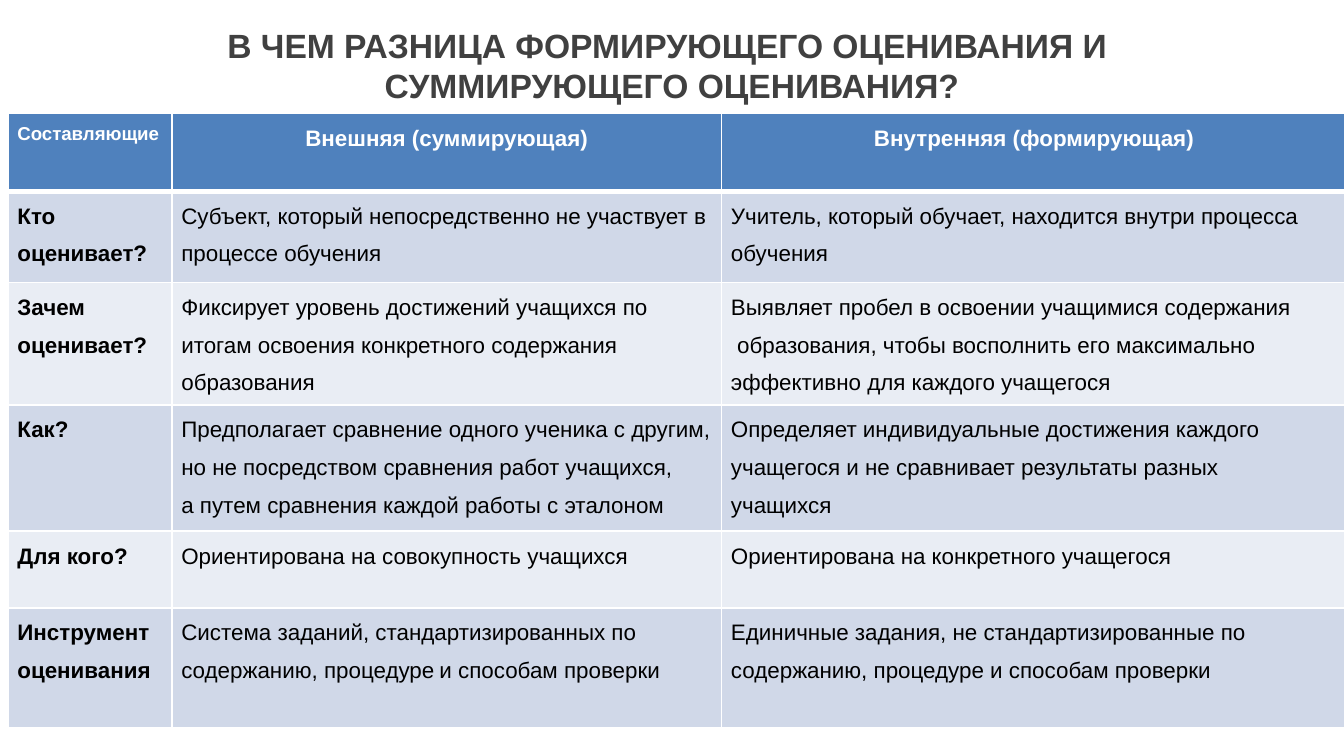
from lxml import etree
from pptx import Presentation
from pptx.dml.color import RGBColor
from pptx.enum.text import MSO_ANCHOR, MSO_AUTO_SIZE, PP_ALIGN
from pptx.oxml import parse_xml
from pptx.util import Inches, Pt

LEFT, CENTER = PP_ALIGN.LEFT, PP_ALIGN.CENTER
MIDDLE, NO_FIT = MSO_ANCHOR.MIDDLE, MSO_AUTO_SIZE.NONE
DRAWING = "http://schemas.openxmlformats.org/drawingml/2006/main"

WIDTH = 10
HEIGHT = WIDTH * 9 / 16
COLORS = {"title": "404040", "header": "4F81BD", "odd": "D0D8E8",
          "even": "E9EDF4", "white": "FFFFFF", "text": "000000"}

COLUMNS = [1.22, 4.09, 4.65]
ROWS = [0.58, 0.68, 0.91, 0.94, 0.57, 0.89]
NARROW_SPACE = (" ", {"size": 11, "font": "Calibri"})

# A cell is a list of paragraphs; a paragraph is a string or a list of spans.
CELLS = [
    [["Составляющие"], ["Внешняя (суммирующая)"], ["Внутренняя (формирующая)"]],
    [["Кто", "оценивает?"],
     ["Субъект, который непосредственно не участвует в процессе обучения"],
     ["Учитель, который обучает, находится внутри процесса", "обучения"]],
    [["Зачем", "оценивает?"],
     ["Фиксирует уровень достижений учащихся по",
      "итогам освоения конкретного содержания",
      "образования"],
     ["Выявляет пробел в освоении учащимися содержания",
      " образования, чтобы восполнить его максимально",
      "эффективно для каждого учащегося"]],
    [["Как?"],
     ["Предполагает сравнение одного ученика с другим,",
      "но не посредством сравнения работ учащихся,",
      "а путем сравнения каждой работы с эталоном"],
     ["Определяет индивидуальные достижения каждого",
      "учащегося и не сравнивает результаты разных",
      "учащихся"]],
    [["Для кого?"],
     ["Ориентирована на совокупность учащихся"],
     ["Ориентирована на конкретного учащегося"]],
    [["Инструмент оценивания"],
     [[("Система заданий, стандартизированных по содержанию, процедуре", {}),
       NARROW_SPACE,
       ("и способам проверки", {})]],
     ["Единичные задания, не стандартизированные по содержанию, "
      "процедуре и способам проверки"]],
]
SPACED_CELLS = {(0, 0), (1, 1), (5, 1), (5, 2)}


def add_span(para, text, size=12, font="Arial", color="text", bold=False):
    """Add formatted text, with a line break at each newline."""
    for index, line in enumerate(text.split("\n")):
        if index:
            para.add_line_break()
        span = para.add_run()
        span.text = line
        span.font.size = Pt(size)
        span.font.name = font
        span.font.bold = bold
        span.font.color.rgb = RGBColor.from_string(COLORS[color])


def write(frame, paragraphs, align=LEFT, spacing=None, after=0, **style):
    """Fill a text frame with paragraphs that share one format."""
    for index, content in enumerate(paragraphs):
        para = frame.add_paragraph() if index else frame.paragraphs[0]
        para.alignment = align
        para.line_spacing = spacing
        para.space_before, para.space_after = Pt(0), Pt(after)
        spans = [(content, {})] if isinstance(content, str) else content
        for text, changes in spans:
            add_span(para, text, **{**style, **changes})


def add_borders(cell, bottom):
    properties = cell._tc.get_or_add_tcPr()
    for side, points in (("L", 1), ("R", 1), ("T", 1), ("B", bottom)):
        line = parse_xml(f'<a:ln{side} xmlns:a="{DRAWING}" w="{Pt(points)}"/>')
        fill = etree.SubElement(line, f"{{{DRAWING}}}solidFill")
        etree.SubElement(fill, f"{{{DRAWING}}}srgbClr", val=COLORS["white"])
        properties.append(line)


class Page:
    """One slide; places are percentages of its width and height."""

    def __init__(self, deck):
        self.slide = deck.slides.add_slide(deck.slide_layouts[5])

    def x(self, percent):
        return Inches(WIDTH * percent / 100)

    def y(self, percent):
        return Inches(HEIGHT * percent / 100)

    def title(self, text, height):
        box = self.slide.shapes.title
        box.left, box.top = 0, 0
        box.width, box.height = self.x(100), self.y(height)
        frame = box.text_frame
        frame.word_wrap, frame.auto_size = True, NO_FIT
        frame.vertical_anchor = MIDDLE
        write(frame, [text], align=CENTER, size=18, color="title", bold=True)

    def table(self, left, top):
        table = self.slide.shapes.add_table(
            len(ROWS), len(COLUMNS), self.x(left), self.y(top),
            Inches(sum(COLUMNS)), Inches(sum(ROWS))).table
        for column, width in zip(table.columns, COLUMNS):
            column.width = Inches(width)
        for row, height in zip(table.rows, ROWS):
            row.height = Inches(height)
        for row, contents in enumerate(CELLS):
            for column, paragraphs in enumerate(contents):
                self.cell(table, row, column, paragraphs)

    def cell(self, table, row, column, paragraphs):
        cell = table.cell(row, column)
        header = row == 0
        cell.margin_left = cell.margin_right = Inches(0.07)
        cell.margin_top = cell.margin_bottom = 0
        add_borders(cell, bottom=3 if header else 1)
        shade = "header" if header else "odd" if row % 2 else "even"
        cell.fill.solid()
        cell.fill.fore_color.rgb = RGBColor.from_string(COLORS[shade])
        write(cell.text_frame, paragraphs,
              align=CENTER if header and column else LEFT,
              spacing=1.5,
              after=10 if (row, column) in SPACED_CELLS else 0,
              size=10 if header and not column else 12,
              color="white" if header else "text",
              bold=header or column == 0)


def main():
    deck = Presentation()
    deck.slide_width, deck.slide_height = Inches(WIDTH), Inches(HEIGHT)
    page = Page(deck)
    page.title("В ЧЕМ РАЗНИЦА ФОРМИРУЮЩЕГО ОЦЕНИВАНИЯ И \n"
               "СУММИРУЮЩЕГО ОЦЕНИВАНИЯ?", height=17.3)
    page.table(left=0.6, top=15)
    deck.save("out.pptx")


if __name__ == "__main__":
    main()
